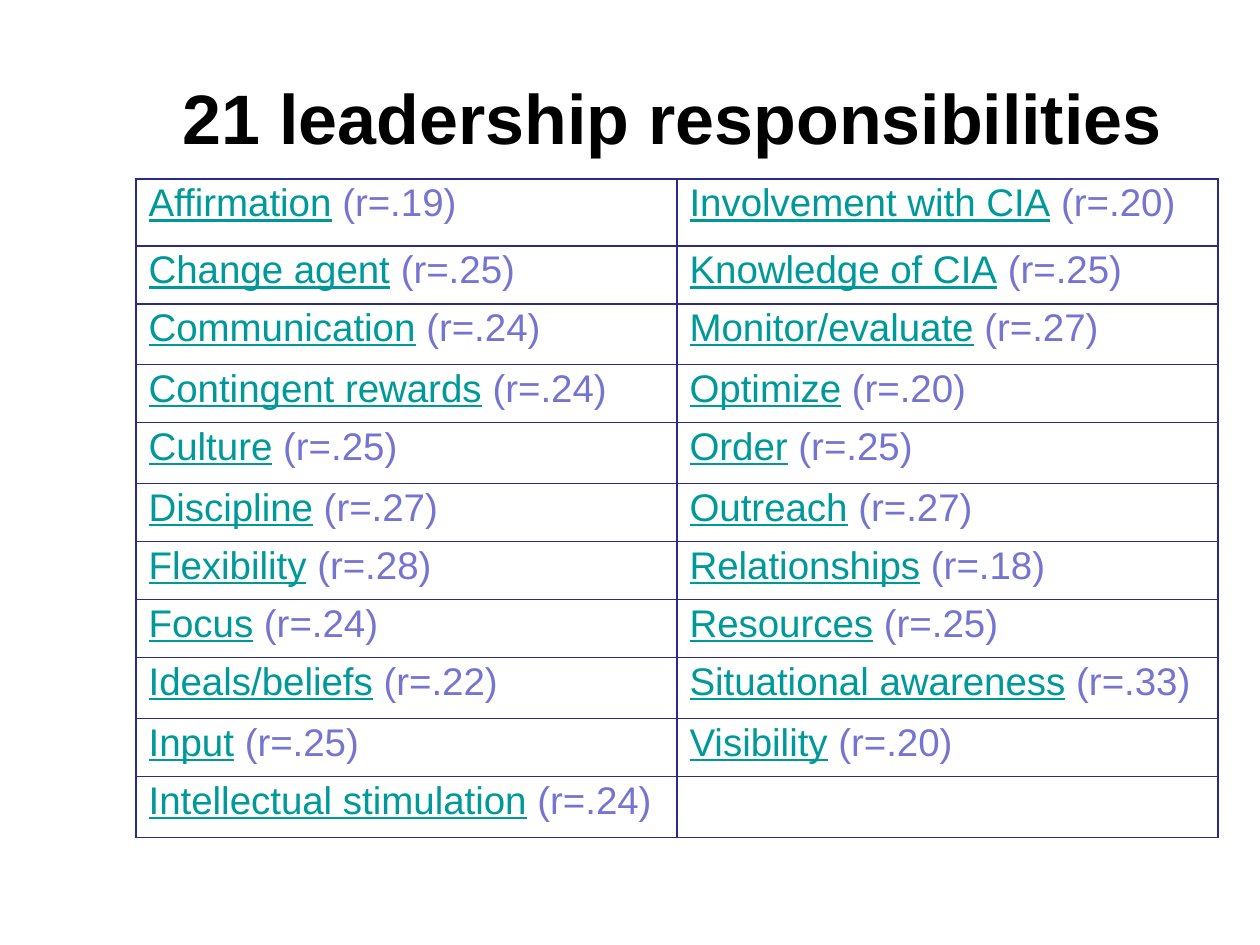
"""Build a slide that lists 21 leadership responsibilities in a two-column table."""
from lxml.etree import SubElement
from pptx import Presentation
from pptx.dml.color import RGBColor
from pptx.enum.text import MSO_ANCHOR, PP_ALIGN
from pptx.oxml.ns import qn
from pptx.util import Emu, Pt

EMU_PER_PX = 914400 / 126
FONT = "Arial"
BLACK = RGBColor(0x00, 0x00, 0x00)
WHITE = RGBColor(0xFF, 0xFF, 0xFF)
TEAL = RGBColor(0x00, 0x99, 0x99)
LAVENDER = RGBColor(0x75, 0x75, 0xD1)
NAVY = RGBColor(0x2A, 0x2A, 0x89)

COLUMN_WIDTH = 541
ROW_HEIGHTS = [67, 58, 61, 58, 61, 58, 58, 58, 61, 58, 61]
RESPONSIBILITIES = [
    ("Affirmation", ".19"), ("Change agent", ".25"), ("Communication", ".24"),
    ("Contingent rewards", ".24"), ("Culture", ".25"), ("Discipline", ".27"),
    ("Flexibility", ".28"), ("Focus", ".24"), ("Ideals/beliefs", ".22"),
    ("Input", ".25"), ("Intellectual stimulation", ".24"),
    ("Involvement with CIA", ".20"), ("Knowledge of CIA", ".25"),
    ("Monitor/evaluate", ".27"), ("Optimize", ".20"), ("Order", ".25"),
    ("Outreach", ".27"), ("Relationships", ".18"), ("Resources", ".25"),
    ("Situational awareness", ".33"), ("Visibility", ".20"),
]


def px(length):
    return Emu(round(length * EMU_PER_PX))


def add_borders(cell):
    properties = cell._tc.get_or_add_tcPr()
    for side in ("a:lnL", "a:lnR", "a:lnT", "a:lnB"):
        line = SubElement(properties, qn(side), w=str(Pt(0.75)))
        fill = SubElement(line, qn("a:solidFill"))
        SubElement(fill, qn("a:srgbClr"), val=str(NAVY))


deck = Presentation()
deck.slide_width, deck.slide_height = px(1260), px(945)
page = deck.slides.add_slide(deck.slide_layouts[5])

title = page.shapes.title
title.left, title.top, title.width, title.height = px(126), px(38), px(1092), px(157)
title.text_frame.text = "21 leadership responsibilities"
title.text_frame.vertical_anchor = MSO_ANCHOR.MIDDLE
heading = title.text_frame.paragraphs[0]
heading.alignment = PP_ALIGN.CENTER
heading.font.name = FONT
heading.font.size = Pt(40)
heading.font.bold = True
heading.font.color.rgb = BLACK

row_count = len(ROW_HEIGHTS)
table = page.shapes.add_table(
    row_count, 2, px(136), px(179), px(2 * COLUMN_WIDTH), px(sum(ROW_HEIGHTS))
).table
table.first_row = False
table.horz_banding = False
for column in table.columns:
    column.width = px(COLUMN_WIDTH)
for row, height in zip(table.rows, ROW_HEIGHTS):
    row.height = px(height)

for cell in table.iter_cells():
    add_borders(cell)
    cell.fill.solid()
    cell.fill.fore_color.rgb = WHITE

for index, (responsibility, correlation) in enumerate(RESPONSIBILITIES):
    column_index, row_index = divmod(index, row_count)
    para = table.cell(row_index, column_index).text_frame.paragraphs[0]
    para.line_spacing = 0.9
    para.font.name = FONT
    para.font.size = Pt(22)
    for text, color, underlined in (
        (responsibility, TEAL, True),
        (f" (r={correlation})", LAVENDER, False),
    ):
        span = para.add_run()
        span.text = text
        span.font.color.rgb = color
        span.font.underline = underlined

deck.save("out.pptx")
